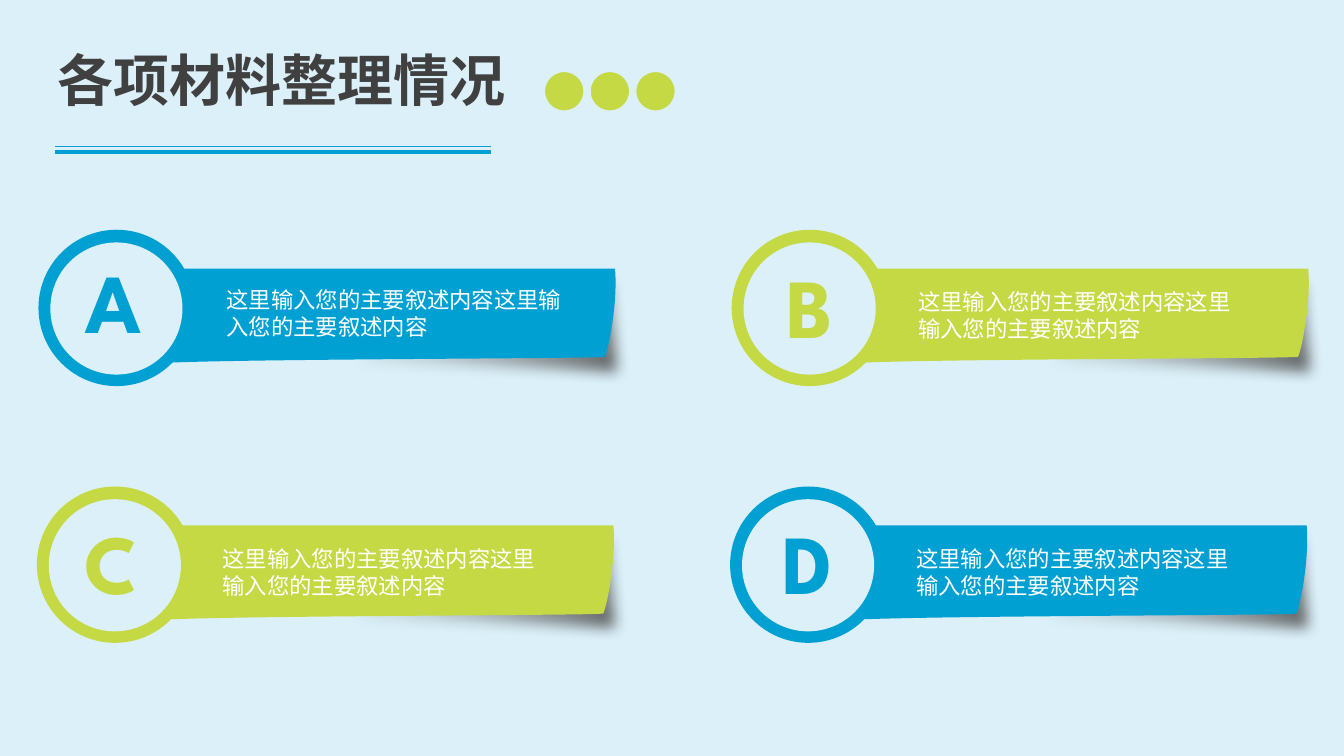
"""Build a slide with four lettered ribbon cards under a title."""
from dataclasses import dataclass

from lxml.etree import SubElement
from pptx import Presentation
from pptx.dml.color import RGBColor
from pptx.enum.shapes import MSO_CONNECTOR, MSO_SHAPE
from pptx.enum.text import MSO_AUTO_SIZE, PP_ALIGN
from pptx.oxml.ns import qn
from pptx.util import Cm, Pt


@dataclass(frozen=True)
class Theme:
    sky: RGBColor = RGBColor(0xDB, 0xF0, 0xF9)
    blue: RGBColor = RGBColor(0x00, 0xA0, 0xD2)
    lime: RGBColor = RGBColor(0xC5, 0xD9, 0x45)
    ink: RGBColor = RGBColor(0x40, 0x40, 0x40)
    white: RGBColor = RGBColor(0xFF, 0xFF, 0xFF)
    shade_light: RGBColor = RGBColor(0x80, 0x80, 0x80)
    shade_dark: RGBColor = RGBColor(0x4C, 0x4C, 0x4C)
    title_size: Pt = Pt(40)
    letter_size: Pt = Pt(60)
    body_size: Pt = Pt(16)
    text_font: str = "Noto Sans CJK SC"
    letter_font: str = "League Spartan"


theme = Theme()


def paint(shape, colour):
    shape.shadow.inherit = False
    shape.fill.solid()
    shape.fill.fore_color.rgb = colour
    shape.line.fill.background()


def write(shapes, box, text, size, font, colour, bold=False, wrap=True):
    frame = shapes.add_textbox(*map(Cm, box)).text_frame
    frame.word_wrap = wrap
    frame.auto_size = MSO_AUTO_SIZE.SHAPE_TO_FIT_TEXT
    frame.text = text
    paragraph = frame.paragraphs[0]
    run = paragraph.runs[0]
    run.font.size, run.font.bold, run.font.name = size, bold, font
    run.font.color.rgb = colour
    SubElement(run.font._element, qn("a:ea"), typeface=font)
    return paragraph


deck = Presentation()
deck.slide_width, deck.slide_height = Cm(33.87), Cm(19.05)
slide = deck.slides.add_slide(deck.slide_layouts[6])
slide.background.fill.solid()
slide.background.fill.fore_color.rgb = theme.sky

for y, weight in ((3.69, 1), (3.84, 3)):
    rule = slide.shapes.add_connector(
        MSO_CONNECTOR.STRAIGHT, Cm(12.38), Cm(y), Cm(1.38), Cm(y))
    rule.line.color.rgb = theme.blue
    rule.line.width = Pt(weight)
    SubElement(rule._element.spPr, qn("a:effectLst"))

dots = slide.shapes.add_group_shape()
for index in range(3):
    dot = dots.shapes.add_shape(
        MSO_SHAPE.OVAL, Cm(13.65 + 1.15 * index), Cm(1.73), Cm(1.14), Cm(1.14))
    paint(dot, theme.lime)
    dot.line.color.rgb = theme.sky
    dot.line.width = Pt(5)

write(slide.shapes, (1.2, 1.02, 11.94, 1.96), "各项材料整理情况",
      theme.title_size, theme.text_font, theme.ink, bold=True, wrap=False)

shadow_outline = (
    ((3.25, 1.04),),
    ((14.71, 1.04),),
    ((14.94, 3.94),),
    ((10.29, 3.61), (7.19, 3.66), (3.25, 3.48)),
    ((3.25, 1.04),),
)
ribbon_outline = (
    ((3.25, 0.98),),
    ((14.53, 0.98),),
    ((14.61, 1.9), (14.33, 3.15), (14.27, 3.2)),
    ((14.2, 3.25), (5.77, 3.25), (3.25, 3.35)),
    ((3.25, 0.98),),
)

description = "这里输入您的主要叙述内容" * 2
cards = (
    ("A", theme.blue, 0.97, 5.79, (0.74, 0.86), (4.49, 1.3), 9.5),
    ("C", theme.lime, 0.93, 12.26, (0.71, 0.97), (4.43, 1.35), 8.89),
    ("B", theme.lime, 18.44, 5.79, (0.79, 0.98), (4.45, 1.35), 8.89),
    ("D", theme.blue, 18.4, 12.26, (0.79, 0.97), (4.44, 1.35), 8.89),
)
for letter, colour, left, top, letter_at, body_at, body_width in cards:
    card = slide.shapes.add_group_shape().shapes
    pieces = []
    for outline in (shadow_outline, ribbon_outline):
        corners = [(Cm(left + x), Cm(top + y)) for *_, (x, y) in outline]
        builder = card.build_freeform(*corners[0])
        builder.add_line_segments(corners[1:], close=True)
        piece = builder.convert_to_shape()
        edges = list(piece._element.iter(qn("a:lnTo")))
        for edge, (*handles, _) in zip(edges, outline[1:]):
            if handles:
                edge.tag = qn("a:cubicBezTo")
            for position, (x, y) in enumerate(handles):
                handle = SubElement(edge, qn("a:pt"),
                                    x=str(Cm(left + x) - piece.left),
                                    y=str(Cm(top + y) - piece.top))
                edge.insert(position, handle)
        pieces.append(piece)
        if outline is shadow_outline:
            ring = card.add_shape(
                MSO_SHAPE.OVAL, Cm(left), Cm(top), Cm(3.94), Cm(3.94))
    shadow, ribbon = pieces
    disc = card.add_shape(
        MSO_SHAPE.OVAL, Cm(left + 0.3), Cm(top + 0.32), Cm(3.33), Cm(3.33))
    for piece, tint in ((ring, colour), (ribbon, colour), (disc, theme.sky),
                        (shadow, theme.shade_dark)):
        paint(piece, tint)

    shadow.fill.gradient()
    shadow.fill.gradient_angle = 315
    near, far = shadow.fill.gradient_stops
    near.position, far.position = 0.43, 1
    near.color.rgb, far.color.rgb = theme.shade_light, theme.shade_dark
    properties = shadow._element.spPr
    clear = properties.find(".//" + qn("a:srgbClr"))
    SubElement(clear, qn("a:alpha"), val="0")
    SubElement(properties.find(qn("a:effectLst")), qn("a:softEdge"), rad="127000")

    initial = write(card, (left + letter_at[0], top + letter_at[1], 2.34, 2.31),
                    letter, theme.letter_size, theme.letter_font, colour, bold=True)
    initial.alignment = PP_ALIGN.CENTER
    initial.line_spacing = 0.8
    write(card, (left + body_at[0], top + body_at[1], body_width, 1.63),
          description, theme.body_size, theme.text_font, theme.white)

deck.save("out.pptx")
